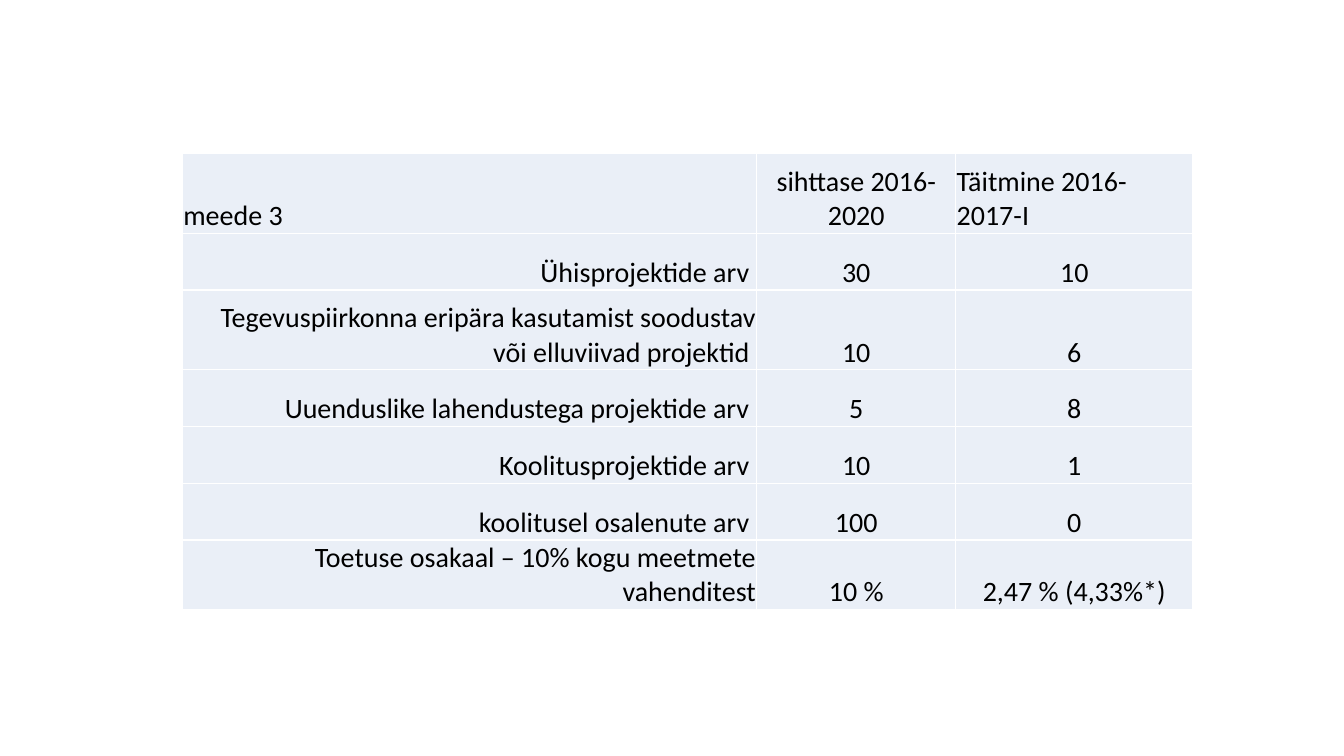
from lxml.etree import SubElement
from pptx import Presentation
from pptx.dml.color import RGBColor
from pptx.enum.text import MSO_ANCHOR, PP_ALIGN
from pptx.oxml.ns import qn
from pptx.util import Cm, Pt

COLORS = {"text": "000000", "cell": "EAEFF7", "border": "FFFFFF"}
CELL_FORMAT = {
    "margin_left": Cm(0.02),
    "margin_right": Cm(0.02),
    "margin_top": Cm(0.02),
    "margin_bottom": Cm(0),
    "vertical_anchor": MSO_ANCHOR.BOTTOM,
}
FONT_FORMAT = {"name": "Calibri", "size": Pt(20), "bold": False}

COL_WIDTHS = [14.47, 5.02, 5.97]
ROW_HEIGHTS = [2.01, 1.43, 2.01, 1.43, 1.43, 1.43, 1.47]
HEADER_ALIGN = [PP_ALIGN.LEFT, PP_ALIGN.CENTER, PP_ALIGN.LEFT]
BODY_ALIGN = [PP_ALIGN.RIGHT, PP_ALIGN.CENTER, PP_ALIGN.CENTER]
ROWS = [
    ["meede 3", "sihttase 2016-2020", "Täitmine 2016-2017-I"],
    ["Ühisprojektide arv ", "30", "10"],
    ["Tegevuspiirkonna eripära kasutamist soodustav või elluviivad projektid ",
     "10", "6"],
    ["Uuenduslike lahendustega projektide arv ", "5", "8"],
    ["Koolitusprojektide arv ", "10", "1"],
    ["koolitusel osalenute arv ", "100", "0"],
    ["Toetuse osakaal – 10% kogu meetmete vahenditest", "10 %",
     "2,47 % (4,33%*)"],
]


def apply_format(target, values):
    for name, value in values.items():
        setattr(target, name, value)


def add_borders(cell):
    tc_pr = cell._tc.get_or_add_tcPr()
    for side in ("a:lnL", "a:lnR", "a:lnT", "a:lnB"):
        line = SubElement(tc_pr, qn(side), w=str(Pt(1)))
        fill = SubElement(line, qn("a:solidFill"))
        SubElement(fill, qn("a:srgbClr"), val=COLORS["border"])


def fill_cell(cell, text, align):
    add_borders(cell)
    cell.fill.solid()
    cell.fill.fore_color.rgb = RGBColor.from_string(COLORS["cell"])
    apply_format(cell, CELL_FORMAT)
    p = cell.text_frame.paragraphs[0]
    p.alignment = align
    r = p.add_run()
    r.text = text
    apply_format(r.font, FONT_FORMAT)
    r.font.color.rgb = RGBColor.from_string(COLORS["text"])


def add_results_table(s, left, top):
    table = s.shapes.add_table(
        len(ROWS), len(COL_WIDTHS), Cm(left), Cm(top),
        Cm(sum(COL_WIDTHS)), Cm(sum(ROW_HEIGHTS))).table
    apply_format(table, {"first_row": False, "horz_banding": False})
    for column, width in zip(table.columns, COL_WIDTHS):
        column.width = Cm(width)
    for i, (row, height, texts) in enumerate(zip(table.rows, ROW_HEIGHTS, ROWS)):
        row.height = Cm(height)
        aligns = BODY_ALIGN if i else HEADER_ALIGN
        for cell, text, align in zip(row.cells, texts, aligns):
            fill_cell(cell, text, align)


def main():
    prs = Presentation()
    prs.slide_width, prs.slide_height = Cm(33.87), Cm(19.05)
    s = prs.slides.add_slide(prs.slide_layouts[6])
    add_results_table(s, 4.6, 3.87)
    prs.save("out.pptx")


if __name__ == "__main__":
    main()
